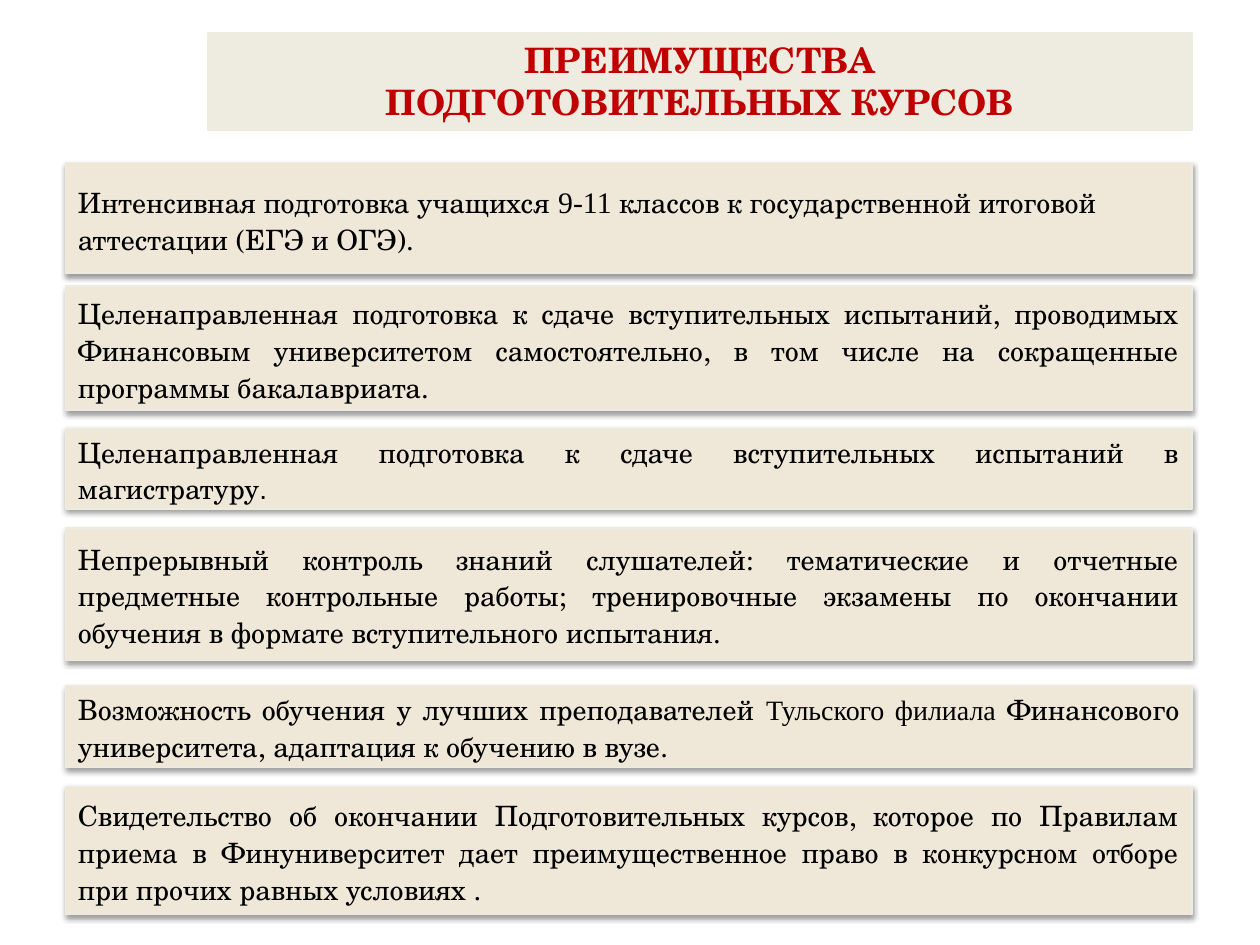
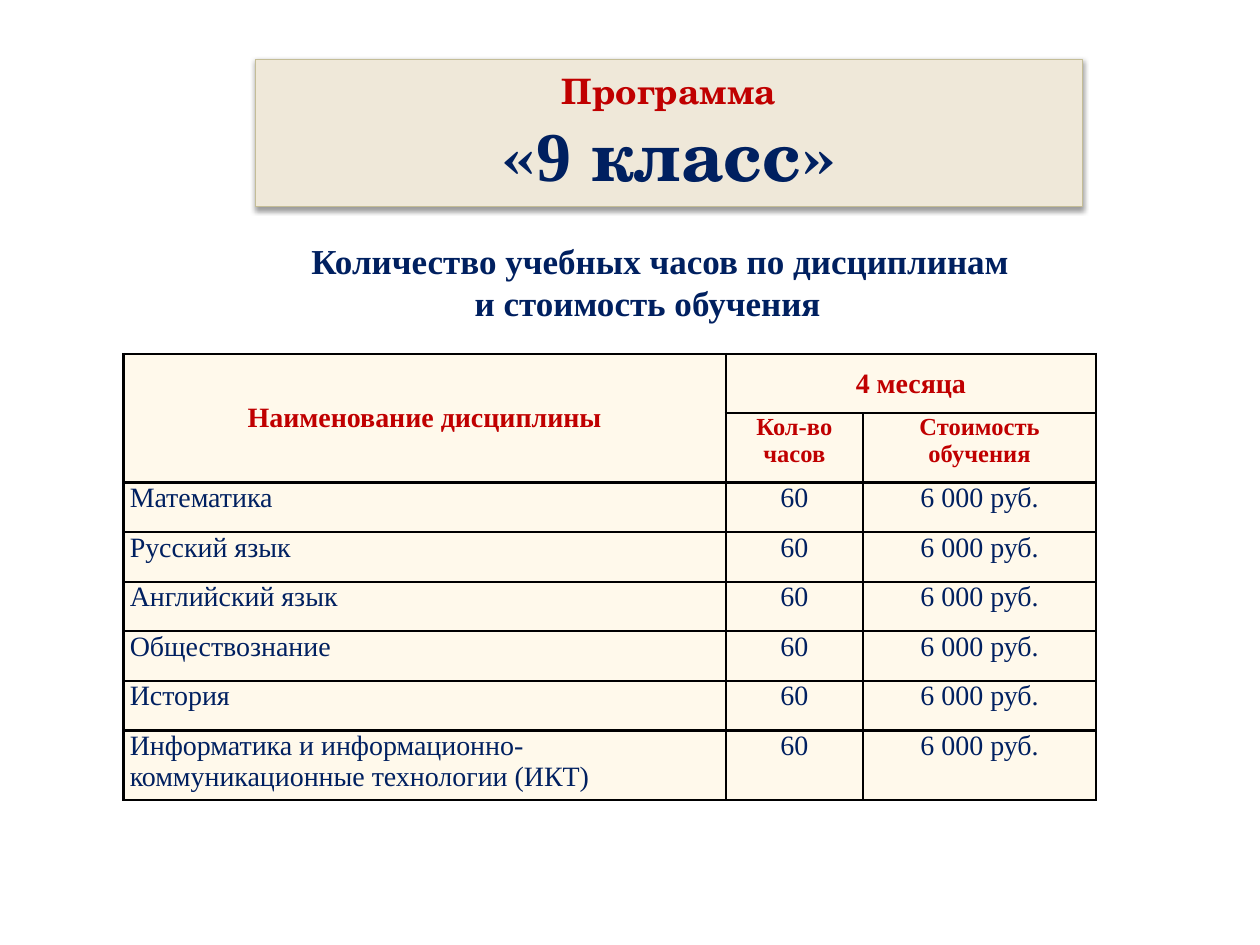
from dataclasses import dataclass
from typing import Any

from lxml.etree import SubElement
from pptx import Presentation
from pptx.dml.color import RGBColor
from pptx.enum.shapes import MSO_SHAPE
from pptx.enum.text import MSO_ANCHOR, PP_ALIGN
from pptx.oxml import parse_xml
from pptx.oxml.ns import nsdecls, qn
from pptx.util import Inches, Pt


@dataclass(frozen=True)
class Theme:
    """Colours, fonts and type sizes of the deck."""

    red: str = "C00000"
    navy: str = "002060"
    black: str = "000000"
    band: str = "EEECE1"
    panel: str = "EFE8D9"
    panel_edge: str = "C4BD97"
    cell: str = "FFF9EB"
    serif: str = "TeX Gyre Schola"
    plain: str = "Times New Roman"
    display: float = 40
    title: float = 20
    digits: float = 17
    body: float = 16
    label: float = 14


THEME = Theme()
SLIDE_WIDTH, SLIDE_HEIGHT = Inches(10), Inches(7.5)
COLUMN, ROW = SLIDE_WIDTH / 100, SLIDE_HEIGHT / 75


@dataclass(frozen=True)
class Frame:
    """A place on the slide, in grid columns and rows."""

    left: float
    top: float
    width: float
    height: float

    def lengths(self) -> tuple[int, int, int, int]:
        """Return left, top, width and height as slide lengths."""
        return (round(self.left * COLUMN), round(self.top * ROW),
                round(self.width * COLUMN), round(self.height * ROW))


@dataclass(frozen=True)
class Span:
    """A piece of text in one style."""

    text: str
    size: float = THEME.body
    color: str = THEME.black
    font: str = THEME.serif
    bold: bool = False


@dataclass(frozen=True)
class Line:
    """A paragraph made of spans."""

    spans: tuple[Span, ...]
    align: PP_ALIGN = PP_ALIGN.CENTER
    spacing: float = 1.0
    indent: float = 0


@dataclass(frozen=True)
class Panel:
    """A filled rectangle with text."""

    frame: Frame
    lines: tuple[Line, ...]
    fill: str = THEME.panel
    edge: str = THEME.band
    edge_width: float = 0.75
    shadow: bool = True
    anchor: MSO_ANCHOR = MSO_ANCHOR.MIDDLE


def heading(text: str, size: float = THEME.title, color: str = THEME.red,
            font: str = THEME.serif, indent: float = 0) -> Line:
    """Return a bold centred line."""
    return Line((Span(text, size, color, font, True),), indent=indent)


def advantage(top: float, height: float, *spans: Span,
              align: PP_ALIGN = PP_ALIGN.JUSTIFY) -> Panel:
    """Return one full-width panel of the advantages list."""
    return Panel(Frame(5.2, top, 89.4, height), (Line(spans, align, 1.1),))


ADVANTAGES_TITLE = Panel(
    Frame(16.5, 2.6, 78.1, 7.7),
    (heading("ПРЕИМУЩЕСТВА"), heading("ПОДГОТОВИТЕЛЬНЫХ КУРСОВ")),
    fill=THEME.band, edge_width=1, shadow=False, anchor=MSO_ANCHOR.TOP)

ADVANTAGES = (
    advantage(12.9, 8.8,
              Span("Интенсивная подготовка учащихся "),
              Span("9-11", THEME.digits, font=THEME.plain),
              Span(" классов к государственной итоговой аттестации (ЕГЭ и ОГЭ)."),
              align=PP_ALIGN.LEFT),
    advantage(22.7, 9.9,
              Span("Целенаправленная подготовка к сдаче вступительных испытаний, "
                   "проводимых Финансовым университетом самостоятельно, в том числе "
                   "на сокращенные программы бакалавриата.")),
    advantage(34.0, 6.4,
              Span("Целенаправленная подготовка к сдаче вступительных испытаний "
                   "в магистратуру"),
              Span(".", font="Arial")),
    advantage(41.9, 10.5,
              Span("Непрерывный контроль знаний слушателей: тематические и отчетные "
                   "предметные контрольные работы; тренировочные экзамены по окончании "
                   "обучения в формате вступительного испытания.")),
    advantage(54.4, 6.5,
              Span("Возможность обучения у лучших преподавателей "),
              Span("Тульского филиала ", font=THEME.plain),
              Span("Финансового университета, адаптация к обучению в вузе.")),
    advantage(62.4, 10.2,
              Span("Свидетельство об окончании Подготовительных курсов, которое по "
                   "Правилам приема в Финуниверситет дает преимущественное право в "
                   "конкурсном отборе при прочих равных условиях .")),
)

PROGRAM_TITLE = Panel(
    Frame(20.3, 4.7, 65.6, 11.7),
    (heading("Программа"),
     Line((Span("«", THEME.display, THEME.navy, THEME.serif, True),
           Span("9", THEME.display, THEME.navy, THEME.plain, True),
           Span(" класс»", THEME.display, THEME.navy, THEME.serif, True)))),
    edge=THEME.panel_edge)

HOURS_FRAME = Frame(7.5, 18.5, 87.8, 7.6)
HOURS_LINES = (
    heading("Количество учебных часов по дисциплинам", color=THEME.navy,
            font=THEME.plain, indent=2),
    heading("и стоимость обучения", color=THEME.navy, font=THEME.plain),
)

PRICE_FRAME = Frame(9.8, 28.1, 77.2, 35.4)
PRICE_COLUMNS = (47.8, 10.9, 18.5)
PRICE_ROWS = (4.7, 5.5, *(3.94,) * 5, 5.5)
SUBJECTS = ("Математика", "Русский язык", "Английский язык", "Обществознание",
            "История", "Информатика и информационно-коммуникационные технологии (ИКТ)")


def write_lines(text_frame: Any, lines: tuple[Line, ...]) -> None:
    """Write styled lines into a text frame."""
    text_frame.text = "\n".join(line.spans[0].text for line in lines)
    for paragraph, line in zip(text_frame.paragraphs, lines):
        paragraph.alignment = line.align
        paragraph.line_spacing = line.spacing
        if line.indent:
            paragraph._p.get_or_add_pPr().set("marL", str(round(line.indent * COLUMN)))
        for span in line.spans[1:]:
            paragraph.add_run().text = span.text
        for run, span in zip(paragraph.runs, line.spans):
            run.font.size = Pt(span.size)
            run.font.name = span.font
            run.font.bold = span.bold
            run.font.color.rgb = RGBColor.from_string(span.color)


def add_shadow(box: Any) -> None:
    """Give a shape a soft shadow below it."""
    effects = box._element.spPr.find(qn("a:effectLst"))
    shadow = SubElement(effects, qn("a:outerShdw"), blurRad="40000", dist="20000",
                        dir="5400000", rotWithShape="0")
    color = SubElement(shadow, qn("a:srgbClr"), val=THEME.black)
    SubElement(color, qn("a:alpha"), val="38000")


def draw_panel(page: Any, panel: Panel) -> None:
    """Draw a filled rectangle with its text."""
    box = page.shapes.add_shape(MSO_SHAPE.RECTANGLE, *panel.frame.lengths())
    box.fill.solid()
    box.fill.fore_color.rgb = RGBColor.from_string(panel.fill)
    box.line.color.rgb = RGBColor.from_string(panel.edge)
    box.line.width = Pt(panel.edge_width)
    box.shadow.inherit = False
    if panel.shadow:
        add_shadow(box)
    box.text_frame.word_wrap = True
    box.text_frame.vertical_anchor = panel.anchor
    write_lines(box.text_frame, panel.lines)


def style_cell(cell: Any) -> None:
    """Set the fill, margins and borders of a table cell."""
    cell.fill.solid()
    cell.fill.fore_color.rgb = RGBColor.from_string(THEME.cell)
    cell.margin_left = cell.margin_right = Inches(0.05)
    cell.margin_top = cell.margin_bottom = 0
    properties = cell._tc.get_or_add_tcPr()
    for position, side in enumerate(("lnL", "lnR", "lnT", "lnB")):
        properties.insert(position, parse_xml(
            f'<a:{side} {nsdecls("a")} w="{Pt(1.5)}"><a:solidFill>'
            f'<a:srgbClr val="{THEME.black}"/></a:solidFill></a:{side}>'))


def draw_prices(page: Any) -> None:
    """Draw the table of subjects, hours and prices."""
    table = page.shapes.add_table(len(PRICE_ROWS), len(PRICE_COLUMNS),
                                  *PRICE_FRAME.lengths()).table
    table.first_row = table.horz_banding = False
    for column, width in zip(table.columns, PRICE_COLUMNS):
        column.width = round(width * COLUMN)
    for row, height in zip(table.rows, PRICE_ROWS):
        row.height = round(height * ROW)
    for cell in table.iter_cells():
        style_cell(cell)
    table.cell(0, 0).merge(table.cell(1, 0))
    table.cell(0, 1).merge(table.cell(0, 2))

    headers = {
        (0, 0): (THEME.body, ("Наименование дисциплины",)),
        (0, 1): (THEME.body, ("4 месяца",)),
        (1, 1): (THEME.label, ("Кол-во", "часов")),
        (1, 2): (THEME.label, ("Стоимость", "обучения")),
    }
    for place, (size, texts) in headers.items():
        cell = table.cell(*place)
        if place[0] == 0:
            cell.vertical_anchor = MSO_ANCHOR.MIDDLE
        write_lines(cell.text_frame, tuple(
            heading(text, size, font=THEME.plain) for text in texts))
    for row_index, subject in enumerate(SUBJECTS, start=2):
        for column_index, text in enumerate((subject, "60", "6 000 руб.")):
            align = PP_ALIGN.CENTER if column_index else PP_ALIGN.LEFT
            span = Span(text, color=THEME.navy, font=THEME.plain)
            write_lines(table.cell(row_index, column_index).text_frame,
                        (Line((span,), align),))


def draw_advantages(page: Any) -> None:
    """Draw the slide with the advantages of the courses."""
    for panel in (ADVANTAGES_TITLE, *ADVANTAGES):
        draw_panel(page, panel)


def draw_program(page: Any) -> None:
    """Draw the slide with the programme of the ninth form."""
    draw_panel(page, PROGRAM_TITLE)
    box = page.shapes.add_textbox(*HOURS_FRAME.lengths())
    box.text_frame.word_wrap = True
    write_lines(box.text_frame, HOURS_LINES)
    draw_prices(page)


def main() -> None:
    """Build and save the deck."""
    deck = Presentation()
    deck.slide_width, deck.slide_height = SLIDE_WIDTH, SLIDE_HEIGHT
    for draw in (draw_advantages, draw_program):
        draw(deck.slides.add_slide(deck.slide_layouts[6]))
    deck.save("out.pptx")


if __name__ == "__main__":
    main()
